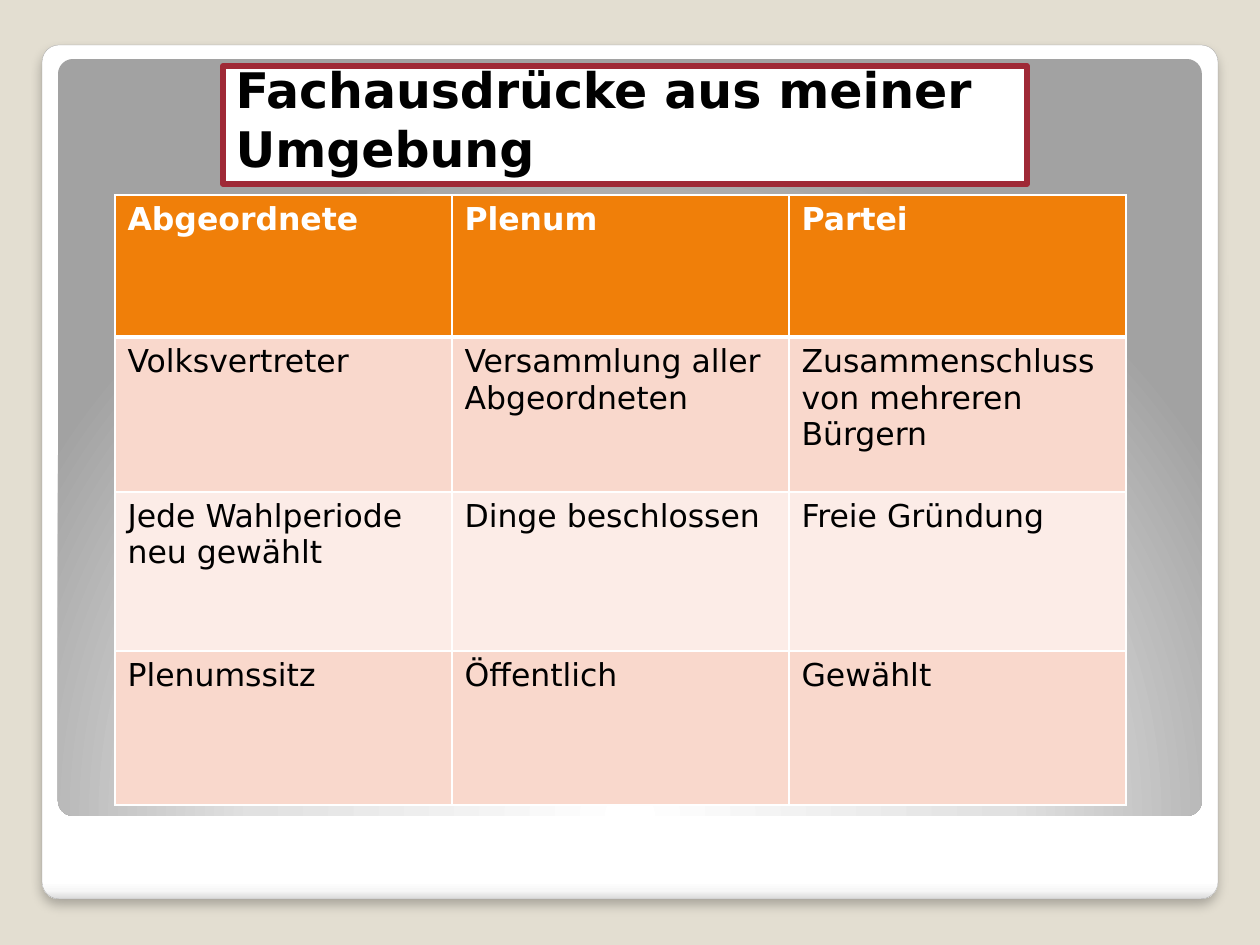
"""Build the slide with a table of political terms in a framed panel."""
from lxml import etree
from pptx import Presentation, util as u
from pptx.dml.color import RGBColor
from pptx.enum import shapes, text
from pptx.oxml import parse_xml
from pptx.oxml.ns import nsdecls

PX = 914400 / 126
FONT = "DejaVu Sans"
COLORS = {
    "backdrop": "E3DED1", "frame_line": "A4A4A4", "title_line": "9F2936",
    "header": "F07F09", "band_dark": "F9D8CC", "band_light": "FCECE7",
    "white": "FFFFFF", "black": "000000",
}
RGB = {name: RGBColor.from_string(value) for name, value in COLORS.items()}
PANELS = [
    ((42, 45, 1176, 854), [(0, "FFFFFF"), (98, "FFFFFF"), (99, "F7F7F7"), (100, "DADADA")],
     '<a:lin ang="5400000" scaled="0"/>'),
    ((58, 59, 1144, 757), [(0, "FFFFFF"), (55, "E1E1E1"), (100, "A2A2A2")],
     '<a:path path="circle"><a:fillToRect l="50000" t="175000" r="50000" b="-75000"/></a:path>'),
]
TERMS = [
    ("Abgeordnete", "Plenum", "Partei"),
    ("Volksvertreter", "Versammlung aller Abgeordneten", "Zusammenschluss von mehreren Bürgern"),
    ("Jede Wahlperiode neu gewählt", "Dinge beschlossen", "Freie Gründung"),
    ("Plenumssitz", "Öffentlich", "Gewählt"),
]
ROW_HEIGHTS = [142, 155, 159, 154]
ROW_FILLS = ["header", "band_dark", "band_light", "band_dark"]
COLUMN_WIDTH = 337


def px(*lengths):
    return [u.Emu(round(length * PX)) for length in lengths]


def write(frame, words, **font_format):
    paragraph = frame.paragraphs[0]
    paragraph.alignment = text.PP_ALIGN.LEFT
    run = paragraph.add_run()
    run.text = words
    run.font.color.rgb = font_format.pop("color")
    for name, value in {"name": FONT, **font_format}.items():
        setattr(run.font, name, value)


deck = Presentation()
deck.slide_width, deck.slide_height = px(1260, 945)
slide = deck.slides.add_slide(deck.slide_layouts[5])
slide.background.fill.solid()
slide.background.fill.fore_color.rgb = RGB["backdrop"]

panels = []
for box, stops, direction in PANELS:
    panel = slide.shapes.add_shape(shapes.MSO_SHAPE.ROUNDED_RECTANGLE, *px(*box))
    panel.adjustments[0] = 0.02
    panel.shadow.inherit = False
    panel.line.fill.background()
    panel.fill.background()
    stop_xml = "".join(
        f'<a:gs pos="{place * 1000}"><a:srgbClr val="{color}"/></a:gs>' for place, color in stops)
    properties = panel._element.spPr
    properties.replace(properties.find("{*}noFill"), parse_xml(
        f'<a:gradFill {nsdecls("a")} rotWithShape="1"><a:gsLst>{stop_xml}</a:gsLst>{direction}</a:gradFill>'))
    panels.append(panel)

frame = panels[0]
frame.line.color.rgb = RGB["frame_line"]
frame.line.width = u.Pt(0.16)
frame._element.spPr.find("{*}effectLst").append(parse_xml(
    f'<a:outerShdw {nsdecls("a")} blurRad="76200" dist="50800" dir="5400000" algn="t" rotWithShape="0">'
    f'<a:srgbClr val="{COLORS["black"]}"><a:alpha val="25000"/></a:srgbClr></a:outerShdw>'))

title = slide.shapes.title
slide.shapes._spTree.append(title._element)
title.left, title.top, title.width, title.height = px(223, 66, 804, 118)
title.fill.solid()
title.fill.fore_color.rgb = RGB["white"]
title.line.color.rgb = RGB["title_line"]
title.line.width = u.Pt(3.35)
title_format = {
    "word_wrap": True, "auto_size": text.MSO_AUTO_SIZE.NONE,
    "vertical_anchor": text.MSO_ANCHOR.BOTTOM,
}
for name, value in title_format.items():
    setattr(title.text_frame, name, value)
write(title.text_frame, "Fachausdrücke aus meiner Umgebung",
      size=u.Pt(28), bold=True, color=RGB["black"])

terms = slide.shapes.add_table(
    len(TERMS), len(TERMS[0]), *px(115, 195, COLUMN_WIDTH * 3, sum(ROW_HEIGHTS))).table
for column in terms.columns:
    column.width = px(COLUMN_WIDTH)[0]
for row_index, (row_terms, height, fill) in enumerate(zip(TERMS, ROW_HEIGHTS, ROW_FILLS)):
    terms.rows[row_index].height = px(height)[0]
    is_header = row_index == 0
    widths = {"lnL": 1, "lnR": 1, "lnT": 3 if row_index == 1 else 1, "lnB": 3 if is_header else 1}
    for column_index, term in enumerate(row_terms):
        cell = terms.cell(row_index, column_index)
        for side, points in widths.items():
            cell._tc.get_or_add_tcPr().append(parse_xml(
                f'<a:{side} {nsdecls("a")} w="{u.Pt(points)}"><a:solidFill>'
                f'<a:srgbClr val="{COLORS["white"]}"/></a:solidFill></a:{side}>'))
        cell.fill.solid()
        cell.fill.fore_color.rgb = RGB[fill]
        write(cell.text_frame, term, size=u.Pt(18), bold=is_header,
              color=RGB["white" if is_header else "black"])

deck.save("out.pptx")
